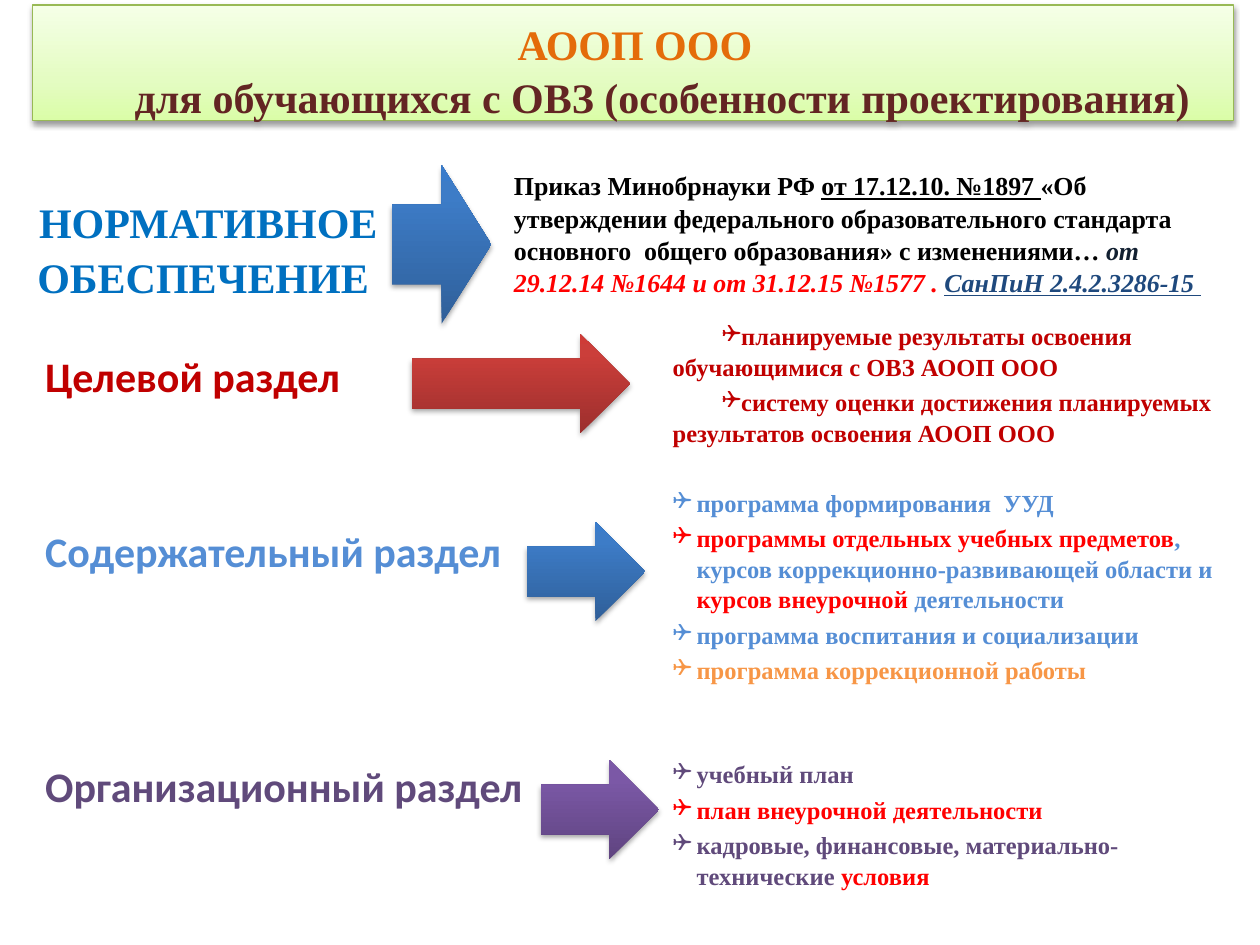
"""Build a slide on designing an adapted basic education programme."""
from dataclasses import dataclass

from lxml.etree import SubElement
from pptx import Presentation
from pptx.dml.color import RGBColor
from pptx.enum.shapes import MSO_SHAPE
from pptx.enum.text import MSO_ANCHOR, PP_ALIGN
from pptx.oxml.ns import qn
from pptx.util import Pt


@dataclass(frozen=True)
class Theme:
    """Colours, fonts and type sizes of the slide."""
    serif: str = "Times New Roman"
    sans: str = "Calibri"
    heading: float = 24
    title_lead: float = 32
    order: float = 14.8
    detail: float = 14
    maroon: str = "632523"
    orange: str = "E46C0A"
    azure: str = "0070C0"
    crimson: str = "C00000"
    sky: str = "558ED5"
    violet: str = "604A7B"
    red: str = "FF0000"
    amber: str = "F79646"
    black: str = "000000"
    ink: str = "122031"
    navy: str = "1F497D"
    edge: str = "98B955"
    green_fade: tuple = ((0, "DAFDA7"), (35, "E4FCC2"), (100, "F5FFE7"))
    blue_fade: tuple = ((0, "2F5F99"), (80, "3D7CC7"), (100, "3A7CCB"))
    red_fade: tuple = ((0, "9C2F2D"), (80, "CB3E3A"), (100, "CE3B37"))
    violet_fade: tuple = ((0, "5F4480"), (80, "7B58A6"), (100, "7C57A8"))


T = Theme()

TITLE = [
    (" ", dict(color=T.maroon, size=T.title_lead)),
    ("АООП ООО ", dict(color=T.orange)),
    ("\n", {}),
    (" для обучающихся с ОВЗ (особенности проектирования)", dict(color=T.maroon)),
]
REGULATION = [("НОРМАТИВНОЕ ОБЕСПЕЧЕНИЕ ", dict(color=T.azure))]
ORDER = [
    ("Приказ Минобрнауки РФ ", dict(color=T.black)),
    ("от 17.12.10. №1897 ", dict(color=T.black, underline=True)),
    ("«Об утверждении федерального образовательного стандарта основного  общего "
     "образования» с изменениями… ", dict(color=T.black)),
    ("от ", dict(color=T.ink, italic=True)),
    ("29.12.14 №1644 и от 31.12.15 №1577 . ", dict(color=T.red, italic=True)),
    ("СанПиН 2.4.2.3286-15 ", dict(color=T.navy, italic=True, underline=True)),
]
SECTIONS = [
    ("Целевой раздел", T.crimson, 0),
    ("Содержательный раздел", T.sky, 71.4),
    ("Организационный раздел", T.violet, 105.6),
]
DETAILS = [
    dict(gap=2.8, indent=(0, 28.1), items=[
        [("планируемые результаты освоения обучающимися с ОВЗ АООП ООО", T.crimson)],
        [("систему оценки достижения планируемых результатов освоения АООП ООО", T.crimson)],
    ]),
    dict(gap=22.6, indent=(13.7, -13.7), items=[
        [("программа формирования  УУД", T.sky)],
        [("программы отдельных учебных предметов", T.red),
         (", курсов коррекционно-развивающей области и ", T.sky),
         ("курсов внеурочной ", T.red), ("деятельности", T.sky)],
        [("программа воспитания и социализации", T.sky)],
        [("программа коррекционной работы", T.amber)],
    ]),
    dict(gap=42.1, indent=(13.7, -13.7), items=[
        [("учебный план", T.violet)],
        [("план внеурочной деятельности", T.red)],
        [("кадровые, финансовые, материально-технические ", T.violet), ("условия", T.red)],
    ]),
]
ITEM_GAP = 2.8
ARROWS = [
    ((223.9, 94.3, 56.9, 90.7), T.blue_fade),
    ((235.4, 190.8, 124.6, 56.9), T.red_fade),
    ((301, 298.1, 67.7, 56.9), T.blue_fade),
    ((308.9, 434.2, 67.7, 56.9), T.violet_fade),
]


def write(paragraph, text, *, color=T.black, font=T.serif, size=T.heading,
          italic=False, underline=False):
    """Add one bold run, or a line break, to a paragraph."""
    if text == "\n":
        paragraph.add_line_break()
        return
    run = paragraph.add_run()
    run.text = text
    run.font.name, run.font.size, run.font.bold = font, Pt(size), True
    run.font.italic, run.font.underline = italic, underline
    run.font.color.rgb = RGBColor.from_string(color)


def next_paragraph(frame, gap=0, spacing=None):
    """Return the empty first paragraph or a new one, spaced from the last."""
    first = frame.paragraphs[0]
    paragraph = frame.add_paragraph() if first.runs else first
    paragraph.space_before = Pt(gap)
    if spacing:
        paragraph.line_spacing = spacing
    return paragraph


def indent(paragraph, left, first_line, bullet=None):
    """Set the indents of a paragraph and its bullet."""
    properties = paragraph._p.get_or_add_pPr()
    properties.set("marL", str(Pt(left)))
    properties.set("indent", str(Pt(first_line)))
    if bullet:
        SubElement(properties, qn("a:buFont"), typeface="Wingdings")
        SubElement(properties, qn("a:buChar"), char=bullet)


def text_area(slide, *bounds):
    """Add a wrapping text box and return its frame."""
    frame = slide.shapes.add_textbox(*map(Pt, bounds)).text_frame
    frame.word_wrap = True
    return frame


def faded_shape(slide, kind, bounds, stops, opacity=35, distance=1.8):
    """Add a shape with an upward gradient and a soft shadow below."""
    shape = slide.shapes.add_shape(kind, *map(Pt, bounds))
    shape.line.fill.background()
    shape.shadow.inherit = False
    properties = shape._element.spPr
    fade = SubElement(properties, qn("a:gradFill"), rotWithShape="1")
    stop_list = SubElement(fade, qn("a:gsLst"))
    for position, color in stops:
        stop = SubElement(stop_list, qn("a:gs"), pos=str(position * 1000))
        SubElement(stop, qn("a:srgbClr"), val=color)
    SubElement(fade, qn("a:lin"), ang="16200000", scaled="0")
    properties.find(qn("a:prstGeom")).addnext(fade)
    shadow = SubElement(properties.find(qn("a:effectLst")), qn("a:outerShdw"),
                        blurRad=str(Pt(3.1)), dist=str(Pt(distance)),
                        dir="5400000", rotWithShape="0")
    shade = SubElement(shadow, qn("a:srgbClr"), val=T.black)
    SubElement(shade, qn("a:alpha"), val=str(opacity * 1000))
    return shape


def main():
    """Lay out the slide and save it."""
    deck = Presentation()
    deck.slide_width, deck.slide_height = Pt(720), Pt(540)
    slide = deck.slides.add_slide(deck.slide_layouts[6])

    banner = faded_shape(slide, MSO_SHAPE.RECTANGLE, (18.7, 2.9, 686.2, 66.2),
                         T.green_fade, opacity=38, distance=1.6)
    banner.line.color.rgb = RGBColor.from_string(T.edge)
    banner.line.width = Pt(0.75)
    banner.text_frame.word_wrap = True
    banner.text_frame.vertical_anchor = MSO_ANCHOR.MIDDLE
    title = next_paragraph(banner.text_frame)
    title.alignment = PP_ALIGN.CENTER
    indent(title, 27.4, -27.4)
    for text, style in TITLE:
        write(title, text, **style)

    regulation = next_paragraph(text_area(slide, 8.6, 105.8, 221, 65.5), spacing=1.1)
    regulation.alignment = PP_ALIGN.CENTER
    for text, style in REGULATION:
        write(regulation, text, **style)

    sections = text_area(slide, 18.7, 196.6, 324.7, 311)
    for name, color, gap in SECTIONS:
        write(next_paragraph(sections, gap), name, color=color, font=T.sans)

    order = next_paragraph(text_area(slide, 286.6, 92.9, 418.3, 79.2), spacing=1.04)
    for text, style in ORDER:
        write(order, text, size=T.order, **style)

    details = text_area(slide, 377.3, 179.3, 327.6, 334.1)
    for group in DETAILS:
        for number, item in enumerate(group["items"]):
            entry = next_paragraph(details, ITEM_GAP if number else group["gap"], 1.04)
            indent(entry, *group["indent"], bullet="❑")
            for text, color in item:
                write(entry, text, color=color, size=T.detail)

    for bounds, stops in ARROWS:
        faded_shape(slide, MSO_SHAPE.RIGHT_ARROW, bounds, stops)

    deck.save("out.pptx")


if __name__ == "__main__":
    main()
